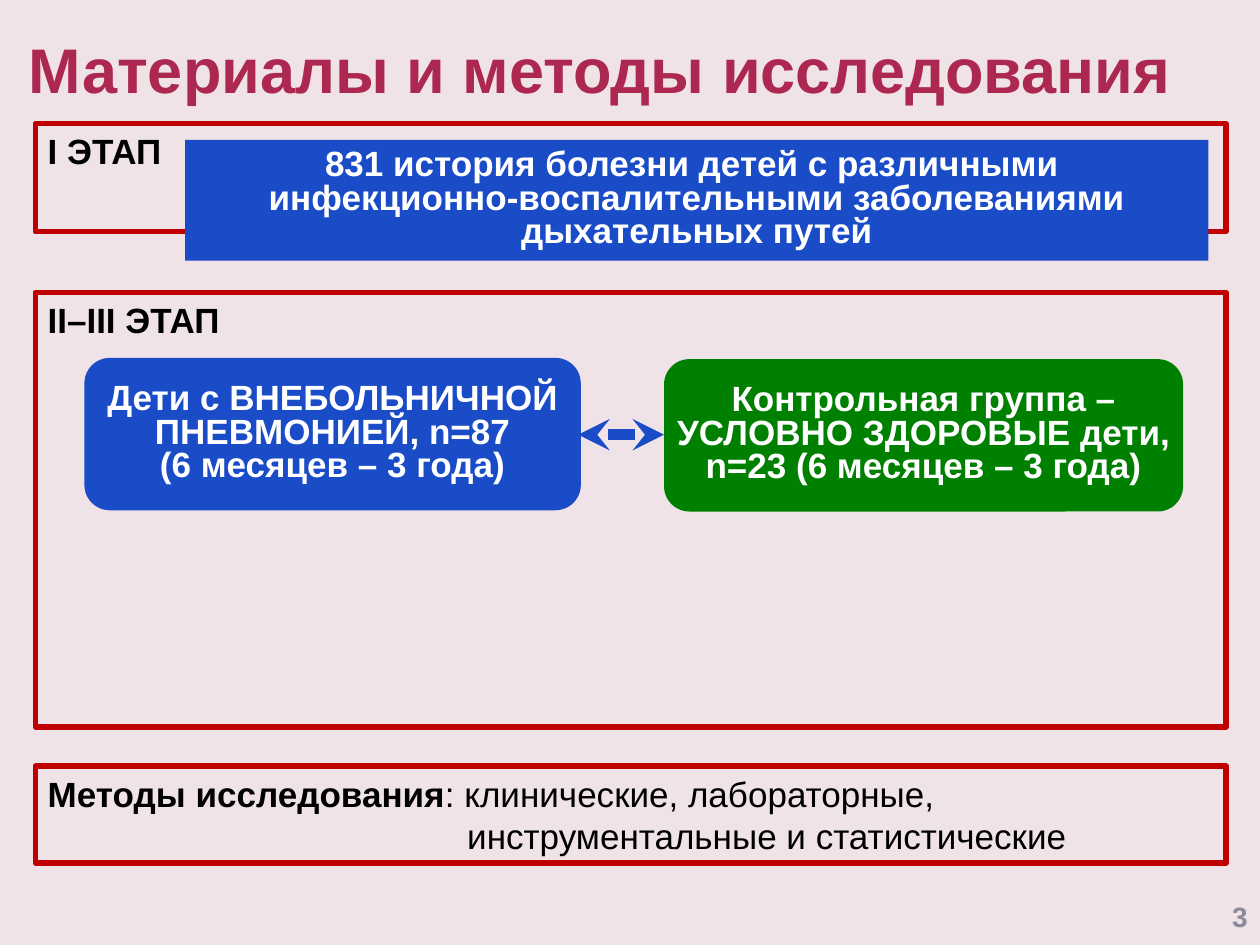
from lxml.etree import SubElement
from pptx import Presentation
from pptx.dml.color import RGBColor
from pptx.enum.shapes import MSO_CONNECTOR, MSO_SHAPE
from pptx.enum.text import MSO_ANCHOR, MSO_AUTO_SIZE, PP_ALIGN
from pptx.oxml.ns import qn
from pptx.util import Inches, Pt

PINK = RGBColor(0xEF, 0xE3, 0xE8)
RED = RGBColor(0xC0, 0x00, 0x00)
CRIMSON = RGBColor(0xAD, 0x28, 0x51)
BLUE = RGBColor(0x1A, 0x4C, 0xC8)
GREEN = RGBColor(0x00, 0x80, 0x00)
GRAY = RGBColor(0x8A, 0x8A, 0x9C)
BLACK = RGBColor(0x00, 0x00, 0x00)
WHITE = RGBColor(0xFF, 0xFF, 0xFF)


def set_font(font, size, color, bold=True):
    """Apply the slide's typeface with a size, colour and weight."""
    font.name = "Arial"
    font.size = Pt(size)
    font.bold = bold
    font.color.rgb = color


def set_line(tf, text, size, color, align, after=0):
    """Fill a text frame with one tightly spaced, vertically centred paragraph."""
    tf.word_wrap = True
    tf.auto_size = MSO_AUTO_SIZE.NONE
    tf.vertical_anchor = MSO_ANCHOR.MIDDLE
    p = tf.paragraphs[0]
    p.text = text
    p.alignment = align
    p.line_spacing = 0.8
    p.space_after = Pt(after)
    set_font(p.font, size, color)


def add_title(s, text):
    """Place and format the title placeholder."""
    title = s.shapes.title
    title.left, title.top = Inches(0.13), Inches(0.21)
    title.width, title.height = Inches(9.75), Inches(0.77)
    set_line(title.text_frame, text, 36, CRIMSON, PP_ALIGN.LEFT, 6)


def add_frame(s, top, height, label, detail=""):
    """Add a red outlined stage frame with a bold label and optional detail."""
    sp = s.shapes.add_shape(MSO_SHAPE.RECTANGLE, Inches(0.28), Inches(top),
                            Inches(9.45), Inches(height))
    sp.shadow.inherit = False
    sp.fill.background()
    sp.line.color.rgb = RED
    sp.line.width = Pt(3)
    tf = sp.text_frame
    tf.word_wrap = True
    tf.vertical_anchor = MSO_ANCHOR.TOP
    p = tf.paragraphs[0]
    p.alignment = PP_ALIGN.LEFT
    pPr = p._p.get_or_add_pPr()
    pPr.set("marL", str(Inches(3.33)))
    pPr.set("indent", str(-Inches(3.33)))
    for text, bold in ((label, True), (detail, False)):
        if text:
            r = p.add_run()
            r.text = text
            set_font(r.font, 20, BLACK, bold)


def add_box(s, kind, left, top, width, height, color, text):
    """Add a filled box with centred white text."""
    sp = s.shapes.add_shape(kind, Inches(left), Inches(top),
                            Inches(width), Inches(height))
    sp.shadow.inherit = False
    sp.fill.solid()
    sp.fill.fore_color.rgb = color
    sp.line.fill.background()
    tf = sp.text_frame
    tf.margin_left = tf.margin_right = Inches(0.02)
    tf.margin_top = tf.margin_bottom = Inches(0.01)
    set_line(tf, text, 20, WHITE, PP_ALIGN.CENTER)


def add_double_arrow(s, left, right, y):
    """Add a horizontal arrow with stealth heads at both ends."""
    cn = s.shapes.add_connector(MSO_CONNECTOR.STRAIGHT, Inches(left), Inches(y),
                                Inches(right), Inches(y))
    cn.line.color.rgb = BLUE
    cn.line.width = Pt(6)
    ln = cn.line._get_or_add_ln()
    for end in ("a:headEnd", "a:tailEnd"):
        SubElement(ln, qn(end), type="stealth")
    SubElement(cn._element.spPr, qn("a:effectLst"))


def add_page_number(s, number):
    """Add the page number at the bottom right."""
    tb = s.shapes.add_textbox(Inches(7.75), Inches(7.1), Inches(2.25), Inches(0.4))
    set_line(tb.text_frame, number, 16, GRAY, PP_ALIGN.RIGHT, 6)


def main():
    """Build the slide and save it."""
    prs = Presentation()
    prs.slide_width, prs.slide_height = Inches(10), Inches(7.5)
    s = prs.slides.add_slide(prs.slide_layouts[5])
    s.background.fill.solid()
    s.background.fill.fore_color.rgb = PINK

    add_title(s, "Материалы и методы исследования")
    add_frame(s, 0.98, 0.86, "I ЭТАП")
    add_frame(s, 2.32, 3.45, "II–III ЭТАП")
    add_frame(s, 6.08, 0.77, "Методы исследования",
              ": клинические, лабораторные, инструментальные и статистические")
    add_box(s, MSO_SHAPE.RECTANGLE, 1.47, 1.11, 8.12, 0.96, BLUE,
            "831 история болезни детей с различными \v"
            "инфекционно-воспалительными заболеваниями дыхательных путей")
    add_box(s, MSO_SHAPE.ROUNDED_RECTANGLE, 0.67, 2.84, 3.94, 1.21, BLUE,
            "Дети с ВНЕБОЛЬНИЧНОЙ ПНЕВМОНИЕЙ, n=87\v(6 месяцев – 3 года)")
    add_box(s, MSO_SHAPE.ROUNDED_RECTANGLE, 5.27, 2.85, 4.12, 1.21, GREEN,
            "Контрольная группа – УСЛОВНО ЗДОРОВЫЕ дети, n=23 (6 месяцев – 3 года)")
    add_double_arrow(s, 4.59, 5.27, 3.45)
    add_page_number(s, "3")
    prs.save("out.pptx")


if __name__ == "__main__":
    main()
